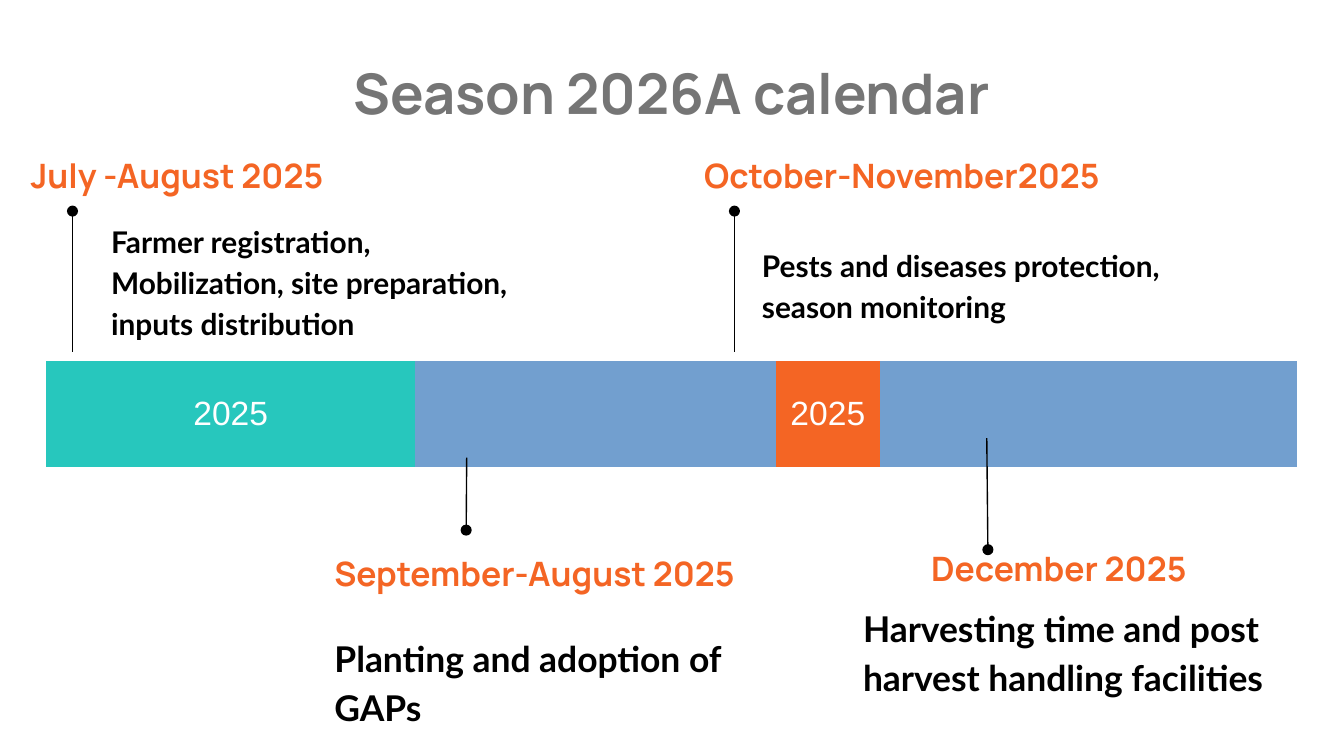
from typing import NamedTuple

from lxml import etree
from pptx import Presentation
from pptx import util as u
from pptx.dml.color import RGBColor
from pptx.enum import shapes, text
from pptx.oxml.ns import qn

COLORS = {
    "title": "757575",
    "orange": "F46524",
    "teal": "27C7BD",
    "blue": "729FCF",
    "black": "000000",
    "white": "FFFFFF",
}
NO_STYLE_NO_GRID = "{2D5ABB26-0587-4C30-8999-92F81FD0307C}"
COMPARISON_LAYOUT = 4
MONTH_WIDTHS = [1.97] * 3 + [1.07, 2.87] + [1.97] * 7


class Box(NamedTuple):
    """Lengths in centimetres."""
    left: float
    top: float
    width: float
    height: float


class Stage(NamedTuple):
    period: str
    period_box: Box
    activity: str
    activity_box: Box
    activity_size: float
    marker: tuple[float, float, float, float]  # start x, y, dotted end x, y


class YearSpan(NamedTuple):
    label: str
    color: str
    first: int
    last: int


STAGES = [
    Stage("July -August 2025", Box(0.33, 2.77, 7.65, 1.09),
          "Farmer registration, Mobilization, site preparation, inputs distribution",
          Box(1.85, 3.87, 8.64, 2.9), 16, (1.37, 6.65, 1.37, 3.99)),
    Stage("September-August 2025", Box(6.07, 10.03, 8.64, 1.6),
          "Planting and adoption of GAPs",
          Box(6.07, 11.67, 8.18, 2.31), 19, (8.82, 8.65, 8.81, 10.02)),
    Stage("October-November2025", Box(13.06, 2.62, 8.18, 1.37),
          "Pests and diseases protection, season monitoring",
          Box(14.15, 4.33, 9.09, 2.11), 16, (13.88, 6.65, 13.88, 3.99)),
    Stage("December 2025", Box(17.35, 10.19, 6.53, 1.09),
          "Harvesting time and post harvest handling facilities",
          Box(16.06, 11.1, 8.79, 2.31), 19, (18.65, 8.28, 18.67, 10.39)),
]
YEAR_SPANS = [
    YearSpan("2025", "teal", 0, 3),
    YearSpan("2025", "orange", 4, 11),
]


def rgb(name: str) -> RGBColor:
    return RGBColor.from_string(COLORS[name])


def place(shape, box: Box) -> None:
    shape.left, shape.top, shape.width, shape.height = map(u.Cm, box)


def set_margins(target) -> None:
    target.margin_left = target.margin_right = u.Cm(0.25)
    target.margin_top = target.margin_bottom = u.Cm(0.25)


def fill_cell(cell, color: str) -> None:
    cell.fill.solid()
    cell.fill.fore_color.rgb = rgb(color)


def write(frame, words: str, font: str, size: float, color: str, bold: bool = True,
          align=text.PP_ALIGN.LEFT):
    paragraph = frame.paragraphs[0]
    paragraph.alignment = align
    run = paragraph.add_run()
    run.text = words
    run.font.name = font
    run.font.size = u.Pt(size)
    run.font.bold = bold
    run.font.color.rgb = rgb(color)
    return paragraph


def prepare_frame(shape, anchor):
    frame = shape.text_frame
    frame.word_wrap = True
    frame.auto_size = text.MSO_AUTO_SIZE.NONE
    frame.vertical_anchor = anchor
    set_margins(frame)
    return frame


def add_title(slide) -> None:
    title = slide.shapes.title
    place(title, Box(0.86, 0.86, 23.67, 1.78))
    frame = prepare_frame(title, text.MSO_ANCHOR.TOP)
    write(frame, "Season 2026A calendar", "Manrope", 30, "title",
          align=text.PP_ALIGN.CENTER)


def add_season_bar(slide) -> None:
    table = slide.shapes.add_table(1, len(MONTH_WIDTHS), u.Cm(0.87), u.Cm(6.83),
                                   u.Cm(sum(MONTH_WIDTHS)), u.Cm(2)).table
    table.first_row = table.horz_banding = False
    table._tbl.tblPr.find(qn("a:tableStyleId")).text = NO_STYLE_NO_GRID
    for column, width in zip(table.columns, MONTH_WIDTHS):
        column.width = u.Cm(width)
    for cell in table.iter_cells():
        fill_cell(cell, "blue")
        cell.vertical_anchor = text.MSO_ANCHOR.MIDDLE
        set_margins(cell)
    for span in YEAR_SPANS:
        cell = table.cell(0, span.first)
        cell.merge(table.cell(0, span.last))
        fill_cell(cell, span.color)
        write(cell.text_frame, span.label, "Arial", 18, "white", False,
              text.PP_ALIGN.CENTER)


def add_marker(slide, ends: tuple[float, float, float, float]) -> None:
    """Draw a thin line with a dot at its far end."""
    connector = slide.shapes.add_connector(shapes.MSO_CONNECTOR.STRAIGHT,
                                           *map(u.Cm, ends))
    connector.line.color.rgb = rgb("black")
    connector.line.width = u.Pt(0.75)
    properties = connector._element.spPr
    line = properties.find(qn("a:ln"))
    etree.SubElement(line, qn("a:tailEnd"), type="oval")
    etree.SubElement(properties, qn("a:effectLst"))


def add_stage(slide, stage: Stage, body) -> None:
    heading = slide.shapes.add_textbox(*map(u.Cm, stage.period_box))
    write(prepare_frame(heading, text.MSO_ANCHOR.MIDDLE), stage.period,
          "Manrope", 18, "orange")

    place(body, stage.activity_box)
    paragraph = write(prepare_frame(body, text.MSO_ANCHOR.TOP), stage.activity,
                      "Lato", stage.activity_size, "black")
    paragraph.line_spacing = 1.15
    paragraph.space_before = u.Pt(0)
    properties = paragraph._p.get_or_add_pPr()
    properties.set("marL", "0")
    properties.set("indent", "0")
    etree.SubElement(properties, qn("a:buNone"))

    add_marker(slide, stage.marker)


def main() -> None:
    presentation = Presentation()
    presentation.slide_width = u.Cm(25.4)
    presentation.slide_height = u.Cm(14.29)
    slide = presentation.slides.add_slide(presentation.slide_layouts[COMPARISON_LAYOUT])
    bodies = list(slide.placeholders)[1:]
    add_title(slide)
    add_season_bar(slide)
    for stage, body in zip(STAGES, bodies):
        add_stage(slide, stage, body)
    presentation.save("out.pptx")


if __name__ == "__main__":
    main()
